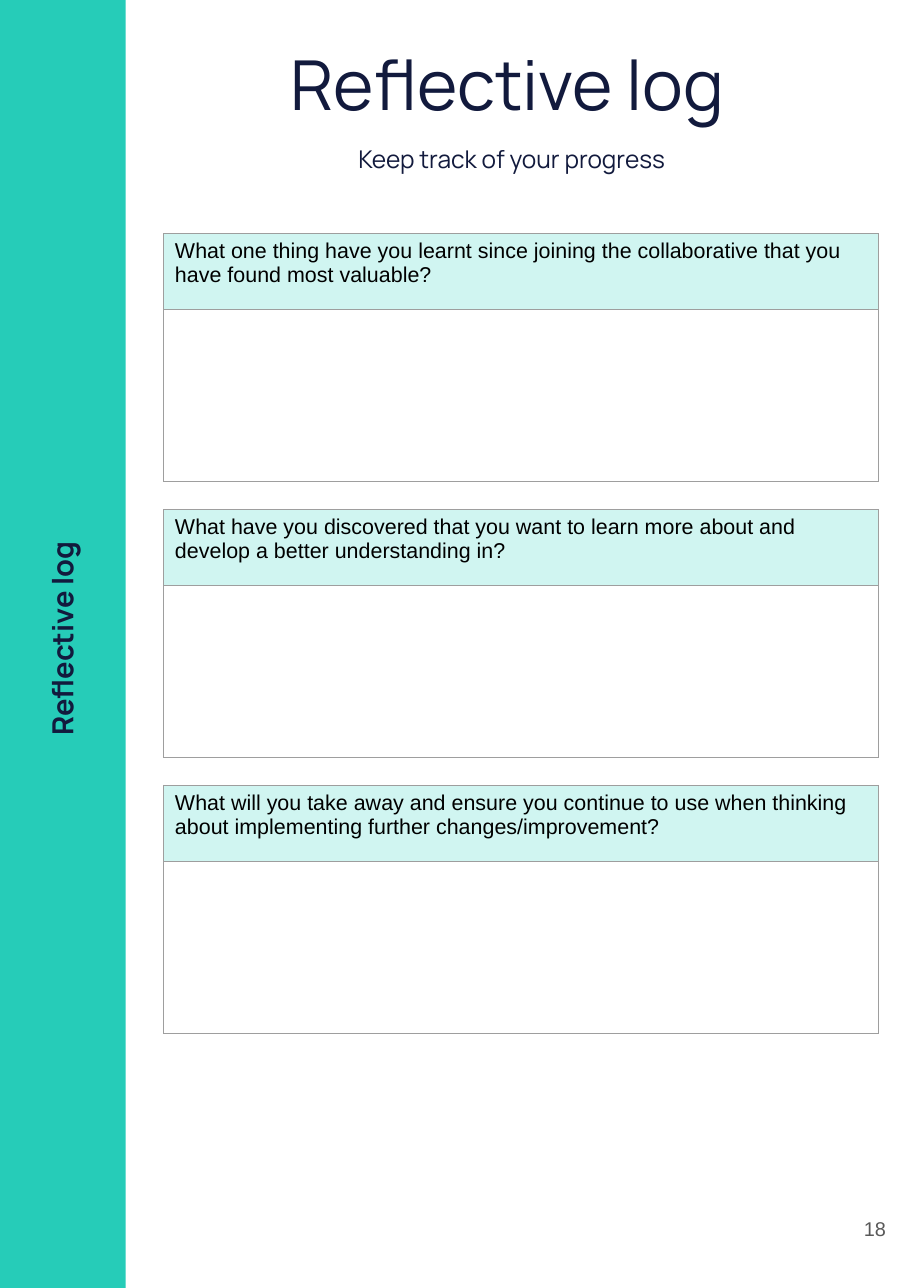
from lxml import etree
from pptx import Presentation
from pptx import util as u
from pptx.dml.color import RGBColor
from pptx.enum import shapes, text
from pptx.oxml.ns import qn

COLORS = {
    "teal": "26CCB8",
    "mint": "D0F5F1",
    "white": "FFFFFF",
    "navy": "121A3D",
    "black": "000000",
    "grey": "595959",
    "border": "9E9E9E",
}
QUESTIONS = [
    "What one thing have you learnt since joining the collaborative that you "
    "have found most valuable?",
    "What have you discovered that you want to learn more about and develop "
    "a better understanding in?",
    "What will you take away and ensure you continue to use when thinking "
    "about implementing further changes/improvement?",
]
CENTER, RIGHT = text.PP_ALIGN.CENTER, text.PP_ALIGN.RIGHT


def color(name):
    return RGBColor.from_string(COLORS[name])


def set_all(target, values):
    for name, value in values.items():
        setattr(target, name, value)


class LogPage:
    heading = {"name": "Manrope", "color": "navy"}
    body = {"name": "Arial", "color": "black", "size": u.Pt(14)}

    def __init__(self, slide):
        self.slide = slide

    def add_words(self, paragraph, words, font, layout=None):
        run = paragraph.add_run()
        run.text = words
        values = dict(font)
        run.font.color.rgb = color(values.pop("color"))
        set_all(run.font, values)
        set_all(paragraph, layout or {})

    def panel(self, box, fill):
        shape = self.slide.shapes.add_shape(
            shapes.MSO_SHAPE.RECTANGLE, *map(u.Cm, box))
        shape.shadow.inherit = False
        shape.fill.solid()
        shape.fill.fore_color.rgb = color(fill)
        shape.line.fill.background()

    def text_box(self, box, lines, margin=0.25, rotation=0,
                 anchor=text.MSO_ANCHOR.TOP):
        shape = self.slide.shapes.add_textbox(*map(u.Cm, box))
        shape.rotation = rotation
        frame = shape.text_frame
        sides = ("left", "top", "right", "bottom")
        set_all(frame, {f"margin_{side}": u.Cm(margin) for side in sides})
        set_all(frame, {"word_wrap": True, "vertical_anchor": anchor})
        for index, line in enumerate(lines):
            paragraph = frame.add_paragraph() if index else frame.paragraphs[0]
            self.add_words(paragraph, *line)

    def outline(self, cell):
        properties = cell._tc.get_or_add_tcPr()
        for side in ("lnL", "lnR", "lnT", "lnB"):
            line = etree.SubElement(
                properties, qn(f"a:{side}"), w=str(u.Pt(0.75)))
            fill = etree.SubElement(line, qn("a:solidFill"))
            etree.SubElement(fill, qn("a:srgbClr"), val=COLORS["border"])

    def question(self, left, top, width, heights, words):
        frame = self.slide.shapes.add_table(
            2, 1, *map(u.Cm, (left, top, width, sum(heights))))
        table = frame.table
        set_all(table, {"first_row": False, "horz_banding": False})
        for row, height, fill in zip(table.rows, heights, ("mint", "white")):
            row.height = u.Cm(height)
            cell = row.cells[0]
            self.outline(cell)
            cell.fill.solid()
            cell.fill.fore_color.rgb = color(fill)
        self.add_words(
            table.cell(0, 0).text_frame.paragraphs[0], words, self.body)


def main():
    presentation = Presentation()
    set_all(presentation, {"slide_width": u.Cm(21), "slide_height": u.Cm(29.7)})
    page = LogPage(presentation.slides.add_slide(presentation.slide_layouts[6]))

    # Side band
    page.panel((-0.1, 0, 3, 29.7), "teal")

    # Title and subtitle
    page.text_box((3.28, 0.71, 17.15, 3.58), [
        ("Reflective log ", {**page.heading, "size": u.Pt(45)},
         {"alignment": CENTER}),
        ("Keep track of your progress ", {**page.heading, "size": u.Pt(16)},
         {"alignment": CENTER, "line_spacing": 1.15, "space_before": u.Pt(10)}),
    ])

    # Vertical section label
    page.text_box((-11.81, 14, 26.49, 1.32), [
        ("Reflective log ", {**page.heading, "size": u.Pt(19), "bold": True},
         {"alignment": CENTER}),
    ], rotation=270)

    # Page number
    page.text_box((19.48, 27.2, 1.27, 2.26), [
        ("18", {**page.body, "size": u.Pt(13), "color": "grey"},
         {"alignment": RIGHT}),
    ], margin=0.33, anchor=text.MSO_ANCHOR.MIDDLE)

    # Question boxes
    for index, words in enumerate(QUESTIONS):
        page.question(3.78, 5.39 + 6.36 * index, 16.46, (1.75, 3.97), words)

    presentation.save("out.pptx")


if __name__ == "__main__":
    main()
